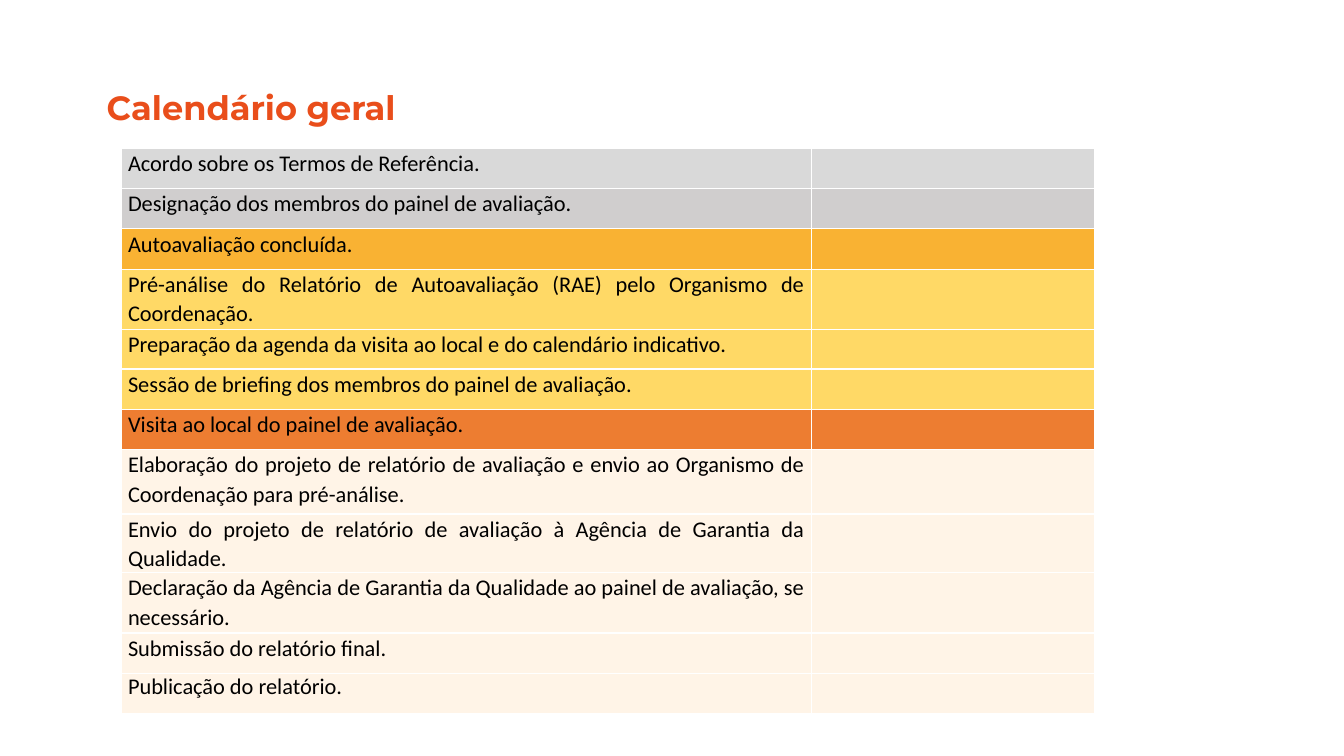
from lxml import etree
from pptx import Presentation
from pptx.dml.color import RGBColor
from pptx.enum.text import MSO_ANCHOR, PP_ALIGN
from pptx.oxml.ns import qn
from pptx.util import Inches, Pt

MIDDLE = MSO_ANCHOR.MIDDLE
JUSTIFY, LEFT = PP_ALIGN.JUSTIFY, PP_ALIGN.LEFT

TITLE = "Calendário geral"
TITLE_GRADIENT = ("E94E1B", "F9B233")
LIGHT_GREY, GREY = "D9D9D9", "D0CECE"
AMBER, YELLOW, ORANGE, CREAM = "F9B233", "FFD966", "ED7D31", "FFF4E7"
COLUMN_WIDTHS = (6.85, 2.81)
STEPS = [
    ("Acordo sobre os Termos de Referência.", LIGHT_GREY, 0.4),
    ("Designação dos membros do painel de avaliação.", GREY, 0.4),
    ("Autoavaliação concluída.", AMBER, 0.4),
    ("Pré-análise do Relatório de Autoavaliação (RAE) pelo Organismo de Coordenação.", YELLOW, 0.6),
    ("Preparação da agenda da visita ao local e do calendário indicativo.", YELLOW, 0.39),
    ("Sessão de briefing dos membros do painel de avaliação.", YELLOW, 0.4),
    ("Visita ao local do painel de avaliação.", ORANGE, 0.4),
    ("Elaboração do projeto de relatório de avaliação e envio ao Organismo de Coordenação para pré-análise.", CREAM, 0.64),
    ("Envio do projeto de relatório de avaliação à Agência de Garantia da Qualidade.", CREAM, 0.58),
    ("Declaração da Agência de Garantia da Qualidade ao painel de avaliação, se necessário.", CREAM, 0.6),
    ("Submissão do relatório final.", CREAM, 0.4),
    ("Publicação do relatório.", CREAM, 0.4),
]


def rgb(value):
    return RGBColor.from_string(value)


def add_title(page):
    box = page.shapes.add_textbox(Inches(0.96), Inches(0.36), Inches(5.75), Inches(1.45))
    frame = box.text_frame
    frame.word_wrap = True
    frame.vertical_anchor = MIDDLE
    para = frame.paragraphs[0]
    para.line_spacing = 0.9
    span = para.add_run()
    span.text = TITLE
    span.font.name = "Montserrat"
    span.font.size = Pt(24)
    span.font.bold = True
    span.font.fill.gradient()
    span.font.fill.gradient_angle = 340
    for stop, colour in zip(span.font.fill.gradient_stops, TITLE_GRADIENT):
        stop.color.rgb = rgb(colour)


def add_borders(cell):
    properties = cell._tc.get_or_add_tcPr()
    for side in ("a:lnL", "a:lnR", "a:lnT", "a:lnB"):
        line = etree.SubElement(properties, qn(side), w=str(Pt(1)))
        fill = etree.SubElement(line, qn("a:solidFill"))
        etree.SubElement(fill, qn("a:srgbClr"), val="FFFFFF")


def style_cell(cell, text, colour, alignment, spacing):
    add_borders(cell)
    cell.fill.solid()
    cell.fill.fore_color.rgb = rgb(colour)
    cell.margin_left = cell.margin_right = Inches(0.07)
    cell.margin_top = cell.margin_bottom = 0
    cell.text = text
    para = cell.text_frame.paragraphs[0]
    para.alignment = alignment
    para.line_spacing = spacing
    para.font.name = "Calibri"
    para.font.size = Pt(16)
    para.font.color.rgb = rgb("000000")


def add_calendar(page):
    height = sum(step[2] for step in STEPS)
    table = page.shapes.add_table(
        len(STEPS), len(COLUMN_WIDTHS), Inches(1.2), Inches(1.47),
        Inches(sum(COLUMN_WIDTHS)), Inches(height),
    ).table
    table.first_row = False
    table.horz_banding = False
    for column, width in zip(table.columns, COLUMN_WIDTHS):
        column.width = Inches(width)
    for row, step in zip(table.rows, STEPS):
        text, colour, row_height = step
        row.height = Inches(row_height)
        alignment, spacing = (LEFT, 1.0) if step == STEPS[-1] else (JUSTIFY, 1.07)
        for cell, content in zip(row.cells, (text, "")):
            style_cell(cell, content, colour, alignment, spacing)


def main():
    deck = Presentation()
    deck.slide_width = Inches(13.33)
    deck.slide_height = Inches(7.5)
    page = deck.slides.add_slide(deck.slide_layouts[6])
    add_title(page)
    add_calendar(page)
    deck.save("out.pptx")


if __name__ == "__main__":
    main()
